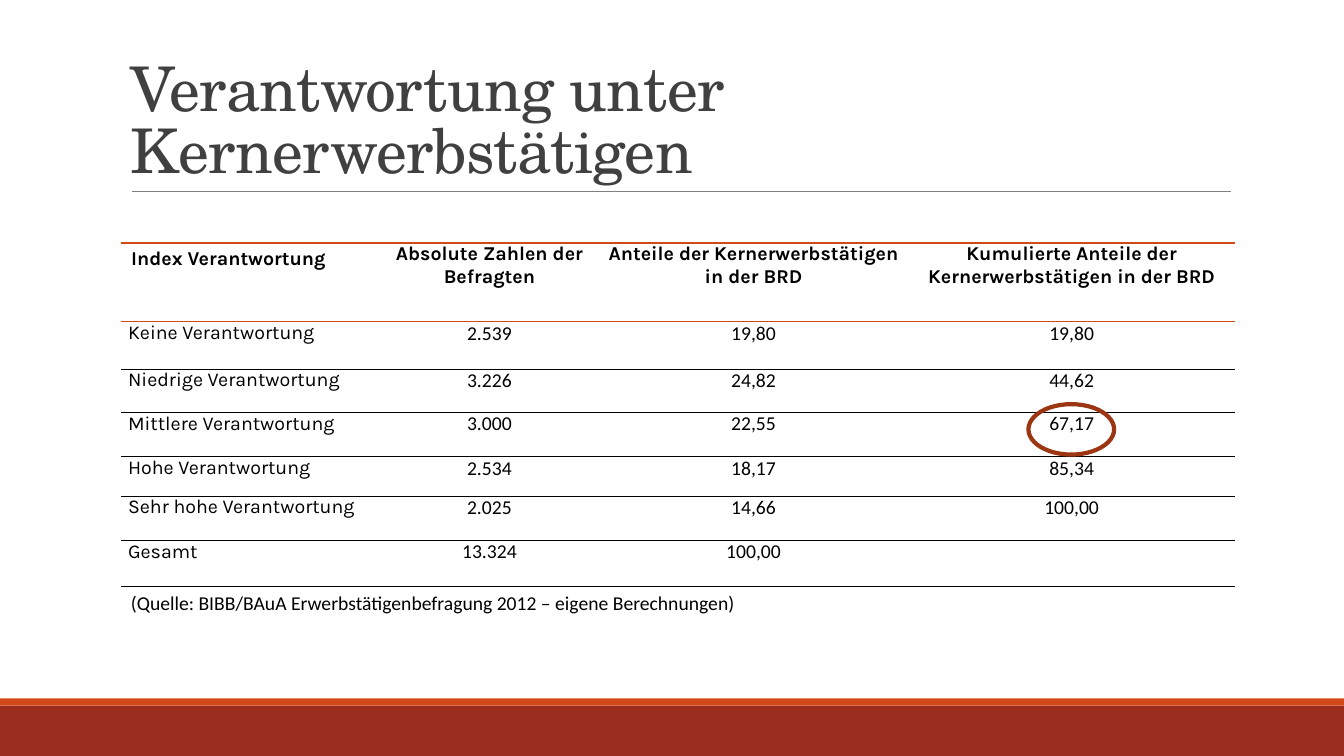
"""Build the slide with the table of responsibility among core workers."""
from dataclasses import dataclass

from lxml import etree
from pptx import Presentation
from pptx.dml.color import RGBColor as RGB
from pptx.enum.shapes import MSO_CONNECTOR, MSO_SHAPE as SHAPE
from pptx.enum.text import MSO_ANCHOR as ANCHOR, PP_ALIGN as ALIGN
from pptx.oxml.ns import qn
from pptx.util import Inches, Pt


@dataclass(frozen=True)
class Theme:
    title_font: str = "TeX Gyre Schola"
    label_font: str = "Karla"
    number_font: str = "Calibri"
    title_size: float = 44
    text_size: float = 14
    title: str = "404040"
    text: str = "000000"
    paper: str = "FFFFFF"
    rule: str = "808080"
    accent: str = "D34817"
    footer: str = "9B2D1F"
    ring: str = "9C3511"


T = Theme()


def style(p, font, size, color, bold=False):
    for r in p.runs:
        r.font.name, r.font.size, r.font.bold = font, Pt(size), bold
        r.font.color.rgb = RGB.from_string(color)


def border(cell, side, color, width):
    ln = etree.SubElement(cell._tc.get_or_add_tcPr(), qn(f"a:{side}"), w=str(Pt(width)))
    fill = etree.SubElement(ln, qn("a:solidFill"))
    etree.SubElement(fill, qn("a:srgbClr"), val=color)


prs = Presentation()
prs.slide_width, prs.slide_height = Inches(13.33), Inches(7.5)
s = prs.slides.add_slide(prs.slide_layouts[6])

for top, height, color in [(7, 0.5, T.footer), (6.93, 0.07, T.accent)]:
    bar = s.shapes.add_shape(SHAPE.RECTANGLE, 0, Inches(top), prs.slide_width, Inches(height))
    bar.shadow.inherit = False
    bar.fill.solid()
    bar.fill.fore_color.rgb = RGB.from_string(color)
    bar.line.fill.background()

rule = s.shapes.add_connector(MSO_CONNECTOR.STRAIGHT, Inches(1.31), Inches(1.9),
                              Inches(12.21), Inches(1.9))
rule.line.color.rgb = RGB.from_string(T.rule)
rule.line.width = Pt(0.5)
etree.SubElement(rule._element.spPr, qn("a:effectLst"))

tf = s.shapes.add_textbox(Inches(1.2), Inches(0.31), Inches(11.28), Inches(1.59)).text_frame
tf.word_wrap = True
tf.vertical_anchor = ANCHOR.BOTTOM
tf.text = "Verantwortung unter Kernerwerbstätigen"
p = tf.paragraphs[0]
p.line_spacing = 0.85
style(p, T.title_font, T.title_size, T.title)
p.runs[0].font._element.set("spc", "-50")

ROWS = [
    ("Index Verantwortung", "Absolute Zahlen der Befragten",
     "Anteile der Kernerwerbstätigen in der BRD",
     "Kumulierte Anteile der Kernerwerbstätigen in der BRD"),
    ("Keine Verantwortung", "2.539", "19,80", "19,80"),
    ("Niedrige Verantwortung", "3.226", "24,82", "44,62"),
    ("Mittlere Verantwortung", "3.000", "22,55", "67,17"),
    ("Hohe Verantwortung", "2.534", "18,17", "85,34"),
    ("Sehr hohe Verantwortung", "2.025", "14,66", "100,00"),
    ("Gesamt", "13.324", "100,00", ""),
]
COL_WIDTHS = [2.57, 2.17, 3.07, 3.24]
ROW_HEIGHTS = [0.78, 0.47, 0.43, 0.44, 0.39, 0.44, 0.46]

table = s.shapes.add_table(len(ROWS), len(COL_WIDTHS), Inches(1.2), Inches(2.41),
                           Inches(sum(COL_WIDTHS)), Inches(sum(ROW_HEIGHTS))).table
table.first_row = True
table.horz_banding = False
NO_STYLE = "{2D5ABB26-0587-4C30-8999-92F81FD0307C}"
table._tbl.tblPr.find(qn("a:tableStyleId")).text = NO_STYLE
for col, width in zip(table.columns, COL_WIDTHS):
    col.width = Inches(width)

for i, (row, height) in enumerate(zip(ROWS, ROW_HEIGHTS)):
    table.rows[i].height = Inches(height)
    header = i == 0
    for j, text in enumerate(row):
        cell = table.cell(i, j)
        if not header or j > 0:
            cell.margin_left = cell.margin_right = Inches(0.07)
            cell.margin_top = cell.margin_bottom = 0
        above = T.accent if i <= 1 else T.text
        border(cell, "lnT", above, 1 if i <= 1 else 0.25)
        border(cell, "lnB", T.accent if header else T.text, 1 if header else 0.25)
        if header:
            cell.fill.background()
        else:
            cell.fill.solid()
            cell.fill.fore_color.rgb = RGB.from_string(T.paper)
        cell.text_frame.text = text
        p = cell.text_frame.paragraphs[0]
        p.alignment = ALIGN.CENTER if j else ALIGN.LEFT
        font = T.label_font if header or j == 0 else T.number_font
        style(p, font, T.text_size, T.text, bold=header)

tf = s.shapes.add_textbox(Inches(1.2), Inches(5.81), Inches(6.25), Inches(0.64)).text_frame
tf.word_wrap = False
tf.text = "(Quelle: BIBB/BAuA Erwerbstätigenbefragung 2012 – eigene Berechnungen)"
p = tf.paragraphs[0]
p.alignment = ALIGN.JUSTIFY
style(p, T.number_font, T.text_size, T.text)

ring = s.shapes.add_shape(SHAPE.OVAL, Inches(10.2), Inches(4.01), Inches(0.85), Inches(0.5))
ring.shadow.inherit = False
ring.fill.background()
ring.line.color.rgb = RGB.from_string(T.ring)
ring.line.width = Pt(3)

prs.save("out.pptx")
